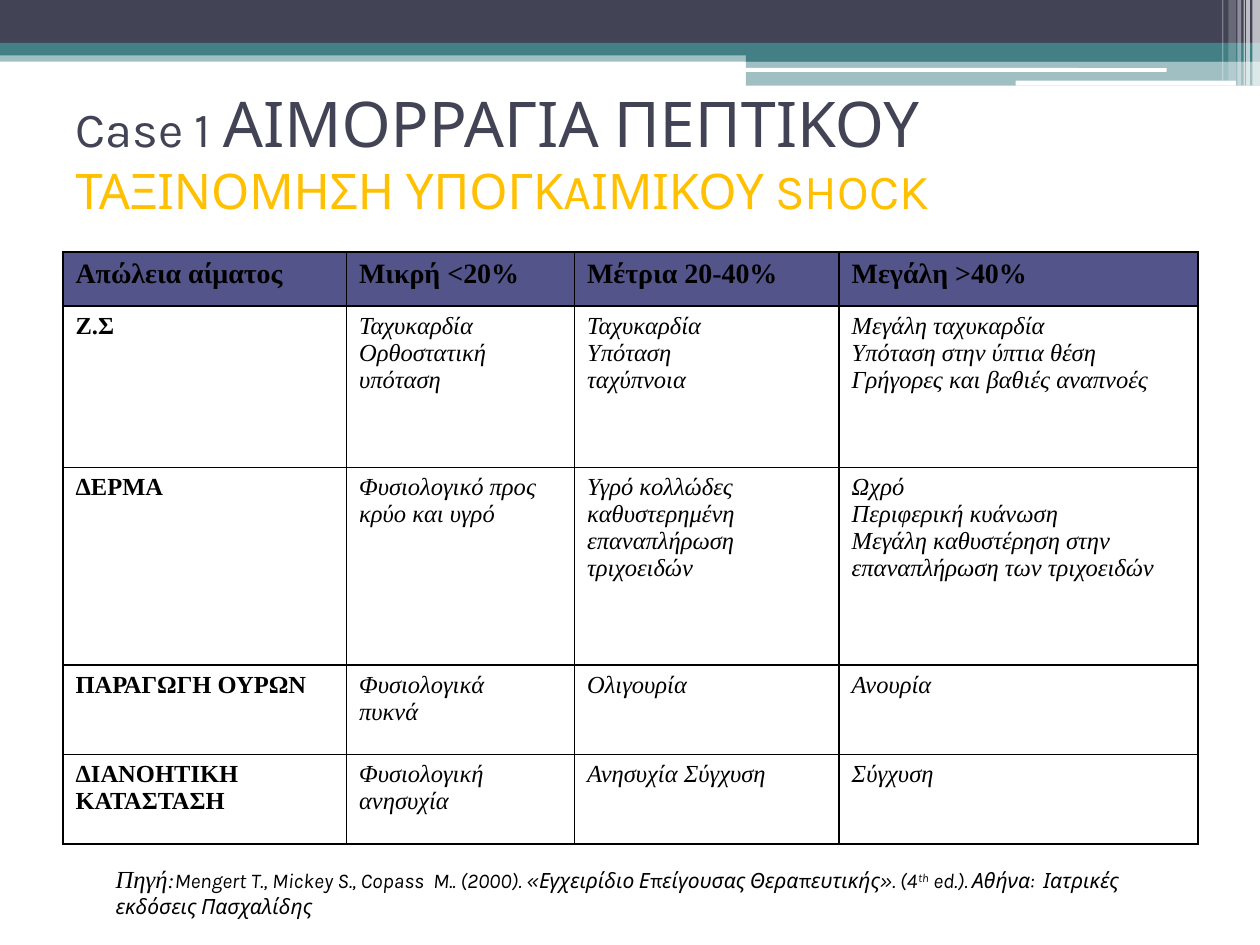
"""Build the slide that classifies hypovolaemic shock by blood loss."""
from lxml.etree import SubElement as Sub
from pptx import Presentation
from pptx.dml.color import RGBColor
from pptx.enum.shapes import MSO_SHAPE as Kind
from pptx.enum.text import MSO_ANCHOR as Anchor, MSO_AUTO_SIZE as Fit, PP_ALIGN as Align
from pptx.oxml.ns import qn
from pptx.util import Inches, Pt

NAVY = RGBColor(0x42, 0x44, 0x56)
TEAL = RGBColor(0x43, 0x80, 0x86)
WHITE = RGBColor(0xFF, 0xFF, 0xFF)
BLACK = RGBColor(0, 0, 0)
GOLD = RGBColor(0xFF, 0xC0, 0x00)
VIOLET = RGBColor(0x53, 0x54, 0x8A)
SANS, SERIF = "Karla", "Times New Roman"

BANDS = [
    (0, 0.4, 10, 0.09, TEAL, 50),
    (0, 0, 10, 0.34, NAVY, 100),
    (0, 0.34, 10, 0.1, TEAL, 100),
    (5.92, 0.39, 4.08, 0.1, TEAL, 100),
    (5.92, 0.48, 4.08, 0.2, TEAL, 50),
]
PILLS = [(5.91, 0.54, 3.35, 0.03, WHITE, 100), (8.06, 0.64, 1.75, 0.04, WHITE, 100)]
STRIPES = [
    (9.94, 0.06, 0.68, 65),
    (9.89, 0.03, 0.68, 65),
    (9.87, 0.01, 0.68, 60),
    (9.82, 0.03, 0.68, 40),
    (9.75, 0.06, 0.64, 20),
    (9.7, 0.01, 0.64, 30),
]
TITLE = [
    [("Case 1 ", 28, NAVY), ("ΑΙΜΟΡΡΑΓΙΑ ΠΕΠΤΙΚΟΥ", 36, NAVY)],
    [("ΤΑΞΙΝΟΜΗΣΗ ΥΠΟΓΚAΙΜΙΚΟΥ SHOCK", 28, GOLD)],
]
COLS = [2.25, 1.81, 2.1, 2.85]
ROWS = [0.43, 1.28, 1.57, 0.71, 0.71]
CELLS = [
    ["Απώλεια αίματος", "Μικρή <20%", "Μέτρια 20-40%", "Μεγάλη >40%"],
    ["Ζ.Σ", "Ταχυκαρδία\nΟρθοστατική υπόταση", "Ταχυκαρδία\nΥπόταση\nταχύπνοια",
     "Μεγάλη ταχυκαρδία\nΥπόταση στην ύπτια θέση\nΓρήγορες και βαθιές αναπνοές"],
    ["ΔΕΡΜΑ", "Φυσιολογικό προς κρύο και υγρό",
     "Υγρό κολλώδες καθυστερημένη επαναπλήρωση τριχοειδών",
     "Ωχρό\nΠεριφερική κυάνωση\nΜεγάλη καθυστέρηση στην επαναπλήρωση των τριχοειδών"],
    ["ΠΑΡΑΓΩΓΗ ΟΥΡΩΝ", "Φυσιολογικά\nπυκνά", "Ολιγουρία", "Ανουρία"],
    ["ΔΙΑΝΟΗΤΙΚΗ ΚΑΤΑΣΤΑΣΗ", "Φυσιολογική ανησυχία", "Ανησυχία Σύγχυση", "Σύγχυση"],
]
SOURCE = [
    ("Πηγή", 14, SERIF, 0),
    (":", 12, SERIF, 0),
    ("Mengert T., Mickey S., Copass  M.. (2000). «Εγχειρίδιο Επείγουσας Θεραπευτικής». (4",
     12, SANS, 0),
    ("th", 12, SANS, 30000),
    (" ed.). Αθήνα:  Ιατρικές εκδόσεις Πασχαλίδης", 12, SANS, 0),
]


def add_bar(slide, kind, left, top, width, height, color, alpha):
    bar = slide.shapes.add_shape(kind, *map(Inches, (left, top, width, height)))
    bar.shadow.inherit = False
    bar.line.fill.background()
    bar.fill.solid()
    bar.fill.fore_color.rgb = color
    if alpha < 100:
        tone = bar._element.spPr.find(".//" + qn("a:srgbClr"))
        Sub(tone, qn("a:alpha"), val=str(alpha * 1000))


def add_run(para, text, size, face, color):
    run = para.add_run()
    run.text = text
    run.font.size, run.font.name = Pt(size), face
    run.font.color.rgb = color
    return run


def fill_title(slide):
    title = slide.shapes.title
    title.left, title.top, title.width, title.height = map(Inches, (0.5, 0.58, 9, 1.25))
    frame = title.text_frame
    frame.auto_size, frame.vertical_anchor = Fit.NONE, Anchor.MIDDLE
    para = frame.paragraphs[0]
    para.alignment = Align.LEFT
    for num, line in enumerate(TITLE):
        if num:
            para.add_line_break()
        for text, size, color in line:
            add_run(para, text, size, SANS, color)
    slide.shapes._spTree.append(title._element)


def add_edges(cell):
    props = cell._tc.get_or_add_tcPr()
    for spot, side in enumerate(("lnL", "lnR", "lnT", "lnB")):
        edge = props.makeelement(qn("a:" + side), {"w": str(Pt(1))})
        Sub(Sub(edge, qn("a:solidFill")), qn("a:srgbClr"), val=str(BLACK))
        props.insert(spot, edge)


def fill_cell(cell, text, head, label):
    cell.text = text
    if head:
        cell.fill.solid()
        cell.fill.fore_color.rgb = VIOLET
    else:
        cell.fill.background()
    add_edges(cell)
    for para in cell.text_frame.paragraphs:
        font = para.font
        font.name, font.size = SERIF, Pt(16 if head else 14)
        font.bold, font.italic = head or label, not (head or label)
        font.color.rgb = BLACK


def add_grid(slide):
    grid = slide.shapes.add_table(
        len(ROWS), len(COLS), Inches(0.5), Inches(2), Inches(sum(COLS)), Inches(sum(ROWS))
    ).table
    for col, width in zip(grid.columns, COLS):
        col.width = Inches(width)
    for row, height in zip(grid.rows, ROWS):
        row.height = Inches(height)
    for r, line in enumerate(CELLS):
        for c, text in enumerate(line):
            fill_cell(grid.cell(r, c), text, r == 0, c == 0)


def add_source(slide):
    box = slide.shapes.add_textbox(*map(Inches, (0.82, 6.81, 8.22, 0.53)))
    frame = box.text_frame
    frame.word_wrap, frame.auto_size = True, Fit.SHAPE_TO_FIT_TEXT
    para = frame.paragraphs[0]
    para.font.italic = True
    for text, size, face, lift in SOURCE:
        run = add_run(para, text, size, face, BLACK)
        run.font.italic = True
        if lift:
            run._r.get_or_add_rPr().set("baseline", str(lift))


def main():
    deck = Presentation()
    deck.slide_width, deck.slide_height = Inches(10), Inches(7.5)
    slide = deck.slides.add_slide(deck.slide_layouts[5])
    for band in BANDS:
        add_bar(slide, Kind.RECTANGLE, *band)
    for pill in PILLS:
        add_bar(slide, Kind.ROUNDED_RECTANGLE, *pill)
    for left, width, height, alpha in STRIPES:
        add_bar(slide, Kind.RECTANGLE, left, 0, width, height, WHITE, alpha)
    fill_title(slide)
    add_grid(slide)
    add_source(slide)
    deck.save("out.pptx")


if __name__ == "__main__":
    main()
